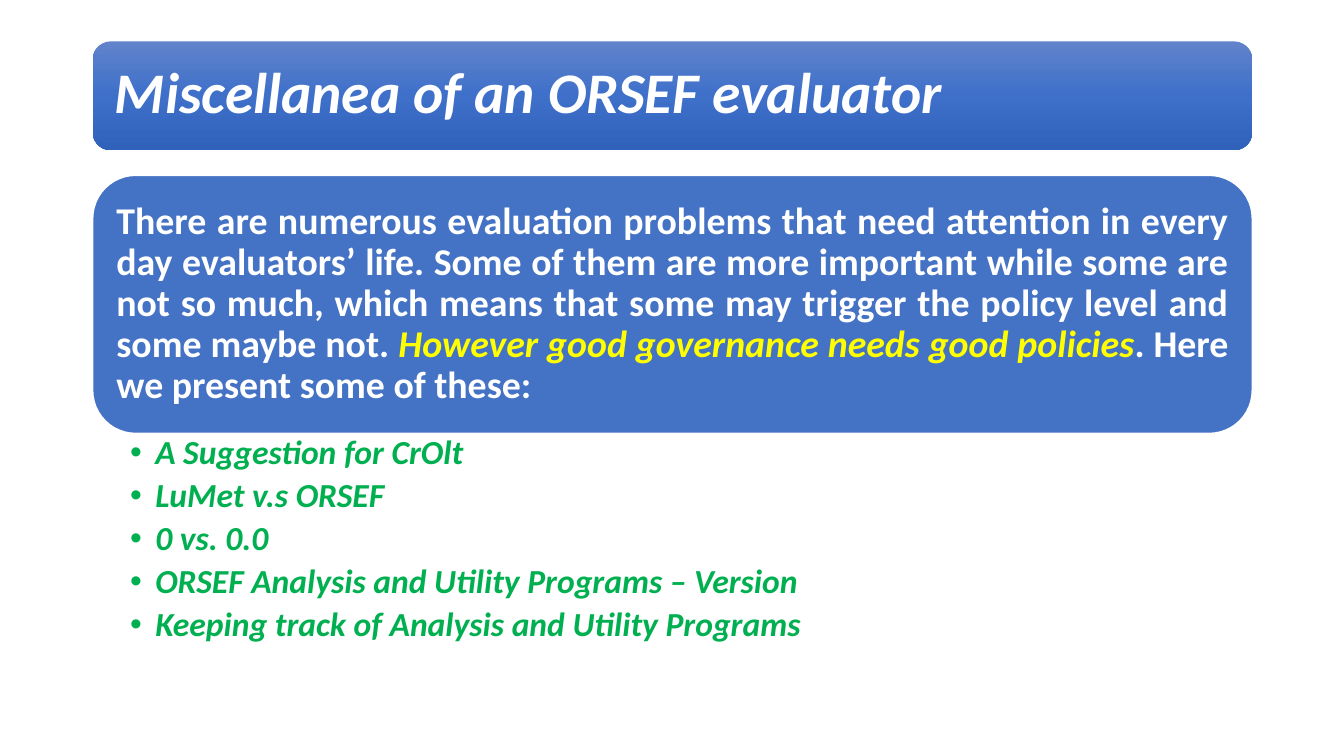
"""Build the slide on the miscellanea of an ORSEF evaluator."""
import copy

import pptx
import pptx.dml.color
import pptx.enum.shapes
import pptx.enum.text
import pptx.oxml
import pptx.oxml.ns
import pptx.util

RGBColor = pptx.dml.color.RGBColor
WHITE = RGBColor(0xFF, 0xFF, 0xFF)
BLUE = RGBColor(0x44, 0x72, 0xC4)
YELLOW = RGBColor(0xFF, 0xFF, 0x00)
GREEN = RGBColor(0x00, 0xB0, 0x50)
BANNER_STOPS = [
    (0, RGBColor(0x61, 0x83, 0xCB)),
    (0.5, RGBColor(0x3E, 0x70, 0xCA)),
    (1, RGBColor(0x30, 0x62, 0xBB)),
]
INTRO = [
    ("There are numerous evaluation problems that need attention in every day "
     "evaluators’ life. Some of them are more important while some are not so "
     "much, which means that some may trigger the policy level and some maybe "
     "not. ", WHITE, False),
    ("However good governance needs good policies", YELLOW, True),
    (". Here we present some of these:", WHITE, False),
]
TOPICS = [
    "A Suggestion for CrOlt",
    "LuMet v.s ORSEF",
    "0 vs. 0.0",
    "ORSEF Analysis and Utility Programs – Version",
    "Keeping track of Analysis and Utility Programs",
]
LEFT, WIDTH = 0.92, 11.5
ROUNDED = pptx.enum.shapes.MSO_SHAPE.ROUNDED_RECTANGLE
MIDDLE = pptx.enum.text.MSO_ANCHOR.MIDDLE


def set_frame(tf, left, top, right, bottom, anchor):
    tf.word_wrap = True
    tf.auto_size = pptx.enum.text.MSO_AUTO_SIZE.NONE
    tf.vertical_anchor = anchor
    tf.margin_left, tf.margin_top, tf.margin_right, tf.margin_bottom = [
        pptx.util.Inches(m) for m in (left, top, right, bottom)]


def style_run(r, size, color, italic):
    r.font.name = "Calibri"
    r.font.size = pptx.util.Pt(size)
    r.font.bold = True
    r.font.italic = italic
    r.font.color.rgb = color


prs = pptx.Presentation()
prs.slide_width = pptx.util.Inches(13.33)
prs.slide_height = pptx.util.Inches(7.5)
s = prs.slides.add_slide(prs.slide_layouts[1])
title, body = s.placeholders

banner, panel = [
    s.shapes.add_shape(ROUNDED, *[pptx.util.Inches(v) for v in (LEFT, top, WIDTH, height)])
    for top, height in ((0.41, 1.08), (1.74, 2.56))]
for sp in (banner, panel):
    sp.shadow.inherit = False
    title.element.addprevious(sp.element)

banner.line.fill.background()
banner.fill.gradient()
banner.fill.gradient_angle = 270
stop_list = banner.element.spPr.find(".//" + pptx.oxml.ns.qn("a:gsLst"))
stop_list.append(copy.deepcopy(stop_list[0]))
for stop, (position, color) in zip(banner.fill.gradient_stops, BANNER_STOPS):
    stop.position = position
    stop.color.rgb = color

title.left, title.top, title.width, title.height = [
    pptx.util.Inches(v) for v in (LEFT + 0.05, 0.46, WIDTH - 0.1, 0.97)]
tf = title.text_frame
set_frame(tf, 0.17, 0.17, 0.17, 0.17, MIDDLE)
tf.text = "Miscellanea of an ORSEF evaluator"
p = tf.paragraphs[0]
p.alignment = pptx.enum.text.PP_ALIGN.LEFT
p.line_spacing = 0.9
style_run(p.runs[0], 41, WHITE, True)

panel.fill.solid()
panel.fill.fore_color.rgb = BLUE
panel.line.color.rgb = WHITE
panel.line.width = pptx.util.Pt(1)
tf = panel.text_frame
set_frame(tf, 0.11, 0.11, 0.11, 0.11, MIDDLE)
p = tf.paragraphs[0]
p.alignment = pptx.enum.text.PP_ALIGN.JUSTIFY
p.line_spacing = 0.9
for text, color, italic in INTRO:
    r = p.add_run()
    r.text = text
    style_run(r, 27, color, italic)

body.left, body.top, body.width, body.height = [
    pptx.util.Inches(v) for v in (LEFT, 4.29, WIDTH, 2.92)]
tf = body.text_frame
set_frame(tf, 0.37, 0.03, 0.19, 0.03, pptx.enum.text.MSO_ANCHOR.TOP)
tf.text = "\n".join(TOPICS)
for p in tf.paragraphs:
    p.level = 1
    p.line_spacing = 0.9
    p.space_before = pptx.util.Pt(0)
    p.space_after = pptx.util.Pt(4.8)
    pPr = p._p.get_or_add_pPr()
    pPr.set("marL", str(pptx.util.Inches(0.25)))
    pPr.set("indent", str(pptx.util.Inches(-0.25)))
    pPr.append(pptx.oxml.parse_xml(
        f'<a:buChar {pptx.oxml.ns.nsdecls("a")} char="•"/>'))
    style_run(p.runs[0], 24, GREEN, True)

prs.save("out.pptx")
